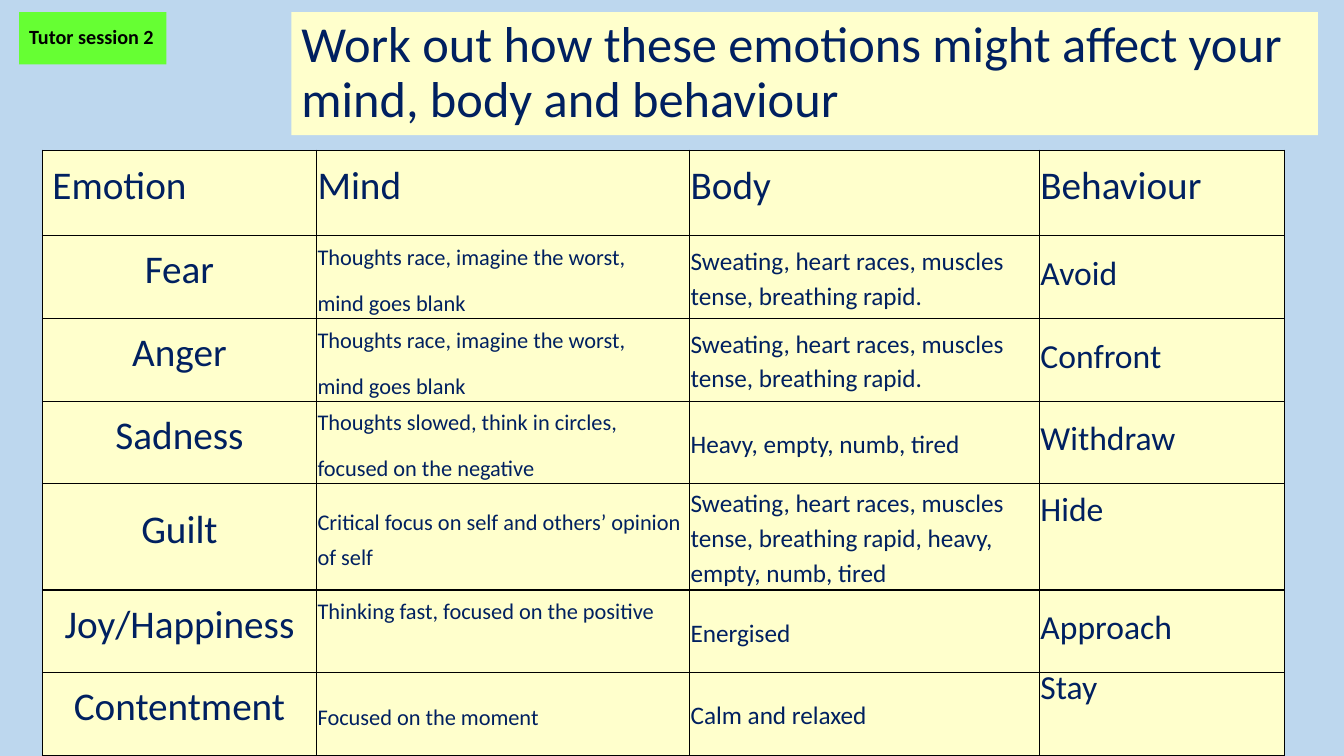
from lxml import etree
from pptx import Presentation
from pptx.dml.color import RGBColor
from pptx.enum.shapes import MSO_SHAPE
from pptx.enum.text import MSO_ANCHOR, PP_ALIGN
from pptx.oxml.ns import qn
from pptx.util import Inches, Pt

RECT = MSO_SHAPE.RECTANGLE
TOP, MIDDLE = MSO_ANCHOR.TOP, MSO_ANCHOR.MIDDLE
LEFT, CENTER = PP_ALIGN.LEFT, PP_ALIGN.CENTER

SKY, CREAM, GREEN, NAVY, BLACK = "BDD7EE", "FFFFCC", "66FF33", "002060", "000000"
COL_WIDTHS = [2.72, 3.7, 3.47, 2.43]
ROW_HEIGHTS = [0.85, 0.82, 0.82, 0.82, 1.05, 0.82, 0.82]
HEADER_SIZE = 28
COL_SIZES = [28, 16, 18, 24]
CELL_MARGIN = 0.01

RACING = "Thoughts race, imagine the worst,\nmind goes blank"
TENSE = "Sweating, heart races, muscles tense, breathing rapid"
EMOTIONS = [
    ["Emotion", "Mind", "Body", "Behaviour"],
    ["Fear", RACING, TENSE + ".", "Avoid"],
    ["Anger", RACING, TENSE + ".", "Confront"],
    ["Sadness", "Thoughts slowed, think in circles,\nfocused on the negative",
     "Heavy, empty, numb, tired", "Withdraw"],
    ["Guilt", "Critical focus on self and others’ opinion of self",
     TENSE + ", heavy, empty, numb, tired", "Hide"],
    ["Joy/Happiness", "Thinking fast, focused on the positive", "Energised", "Approach"],
    ["Contentment", "Focused on the moment", "Calm and relaxed", "Stay"],
]
# Cells that differ from the usual layout, by (row, column)
CELL_LAYOUT = {
    (0, 0): {"margin_left": Inches(0.1)},
    (4, 3): {"vertical_anchor": TOP, "margin_top": Inches(0.12)},
    (5, 1): {"vertical_anchor": TOP},
    (6, 3): {"vertical_anchor": TOP},
}


def rgb(value):
    return RGBColor.from_string(value)


def set_attrs(target, values):
    for name, value in values.items():
        setattr(target, name, value)


class SlideBuilder:
    font = "Calibri"

    def __init__(self, prs, background):
        self.s = prs.slides.add_slide(prs.slide_layouts[6])
        self.fill(self.s.background, background)

    def fill(self, target, color):
        target.fill.solid()
        target.fill.fore_color.rgb = rgb(color)

    def add_text(self, tf, text, size, color, bold=False, **paragraph_format):
        """Fill a text frame, one paragraph for each line of text."""
        for i, line in enumerate(text.split("\n")):
            p = tf.add_paragraph() if i else tf.paragraphs[0]
            set_attrs(p, paragraph_format)
            r = p.add_run()
            r.text = line
            set_attrs(r.font, {"name": self.font, "size": Pt(size), "bold": bold})
            r.font.color.rgb = rgb(color)

    def box(self, left, top, width, height, color, text, size, text_color, bold=False):
        sp = self.s.shapes.add_shape(
            RECT, Inches(left), Inches(top), Inches(width), Inches(height))
        sp.shadow.inherit = False
        self.fill(sp, color)
        sp.line.fill.background()
        set_attrs(sp.text_frame, {"word_wrap": True, "vertical_anchor": MIDDLE})
        self.add_text(sp.text_frame, text, size, text_color, bold,
                      alignment=LEFT, line_spacing=0.9)

    def borders(self, cell, color, width):
        tc_pr = cell._tc.get_or_add_tcPr()
        for i, side in enumerate(("lnL", "lnR", "lnT", "lnB")):
            ln = etree.Element(qn("a:" + side), w=str(Pt(width)))
            solid = etree.SubElement(ln, qn("a:solidFill"))
            etree.SubElement(solid, qn("a:srgbClr"), val=color)
            tc_pr.insert(i, ln)

    def table(self, left, top, rows):
        table = self.s.shapes.add_table(
            len(rows), len(COL_WIDTHS), Inches(left), Inches(top),
            Inches(sum(COL_WIDTHS)), Inches(sum(ROW_HEIGHTS))).table
        set_attrs(table, {"first_row": False, "horz_banding": False})
        for column, width in zip(table.columns, COL_WIDTHS):
            column.width = Inches(width)
        for row, height in zip(table.rows, ROW_HEIGHTS):
            row.height = Inches(height)
        layout = {f"margin_{side}": Inches(CELL_MARGIN)
                  for side in ("left", "right", "top", "bottom")}
        layout["vertical_anchor"] = MIDDLE
        for i, texts in enumerate(rows):
            for j, text in enumerate(texts):
                cell = table.cell(i, j)
                set_attrs(cell, {**layout, **CELL_LAYOUT.get((i, j), {})})
                self.fill(cell, CREAM)
                self.borders(cell, BLACK, 1)
                self.add_text(cell.text_frame, text, COL_SIZES[j] if i else HEADER_SIZE, NAVY,
                              alignment=CENTER if i and j == 0 else LEFT,
                              line_spacing=Pt(24.8), space_after=Pt(8))


def main():
    prs = Presentation()
    set_attrs(prs, {"slide_width": Inches(13.33), "slide_height": Inches(7.5)})
    slide = SlideBuilder(prs, SKY)
    slide.box(2.89, 0.12, 10.18, 1.22, CREAM,
              "Work out how these emotions might affect your mind, body and behaviour", 36, NAVY)
    slide.table(0.42, 1.49, EMOTIONS)
    slide.box(0.19, 0.12, 1.46, 0.52, GREEN, "Tutor session 2", 14.4, BLACK, bold=True)
    prs.save("out.pptx")


if __name__ == "__main__":
    main()
